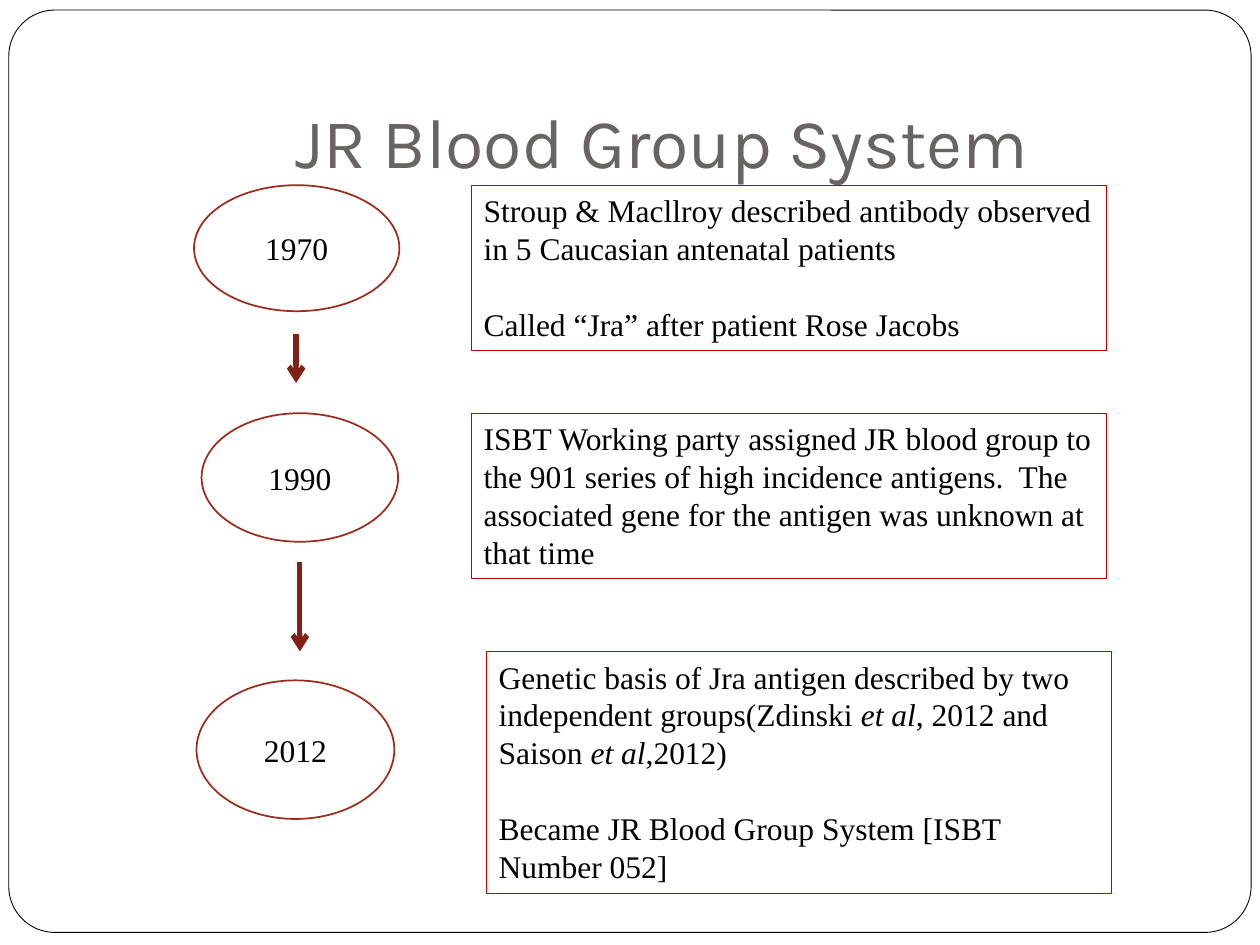
from pptx import Presentation
from pptx.dml.color import RGBColor
from pptx.enum.shapes import MSO_CONNECTOR, MSO_SHAPE
from pptx.enum.text import MSO_ANCHOR, PP_ALIGN
from pptx.oxml.ns import qn
from pptx.util import Pt
from lxml import etree

OVAL, RECTANGLE, ROUNDED = MSO_SHAPE.OVAL, MSO_SHAPE.RECTANGLE, MSO_SHAPE.ROUNDED_RECTANGLE
STRAIGHT = MSO_CONNECTOR.STRAIGHT
TOP, MIDDLE, BOTTOM = MSO_ANCHOR.TOP, MSO_ANCHOR.MIDDLE, MSO_ANCHOR.BOTTOM
LEFT, CENTER = PP_ALIGN.LEFT, PP_ALIGN.CENTER

TITLE = "JR Blood Group System"
EVENTS = [
    {
        "year": "1970",
        "oval": (154, 147, 163, 100),
        "box": (374, 147, 504, 131),
        "paragraphs": [
            ["Stroup & Macllroy described antibody observed in 5 Caucasian antenatal patients"],
            ["Called “Jra” after patient Rose Jacobs"],
        ],
    },
    {
        "year": "1990",
        "oval": (160, 328, 156, 102),
        "box": (374, 328, 504, 131),
        "paragraphs": [
            ["ISBT Working party assigned JR blood group to the 901 series of high incidence "
             "antigens.  The associated gene for the antigen was unknown at that time"],
        ],
    },
    {
        "year": "2012",
        "oval": (156, 540, 157, 110),
        "box": (386, 517, 496, 192),
        "paragraphs": [
            ["Genetic basis of Jra antigen described by two independent groups(Zdinski ",
             "et al", ", 2012 and Saison ", "et al", ",2012)"],
            ["Became JR Blood Group System [ISBT Number 052]"],
        ],
    },
]
ARROWS = [(235, 265, 304), (238, 446, 517)]
ITALIC_TEXT = "et al"

THEME = {
    "title_font": "Karla", "body_font": "Times New Roman",
    "title_size": 40, "body_size": 18, "paragraph_gap": 21.6,
    "title": "696464", "text": "000000", "paper": "FFFFFF", "frame": "000000",
    "oval": "9B2D1F", "box": "C00000", "arrow": "812014",
}
SCALE = 9144


def px(*lengths):
    return [length * SCALE for length in lengths]


def color(name):
    return RGBColor.from_string(THEME[name])


def style_run(run, kind, color_name):
    run.font.name = THEME[f"{kind}_font"]
    run.font.size = Pt(THEME[f"{kind}_size"])
    run.font.color.rgb = color(color_name)


def add_outline(slide, preset, place, line, width, filled=True):
    shape = slide.shapes.add_shape(preset, *px(*place))
    shape.shadow.inherit = False
    if filled:
        shape.fill.solid()
        shape.fill.fore_color.rgb = color("paper")
    else:
        shape.fill.background()
    shape.line.color.rgb = color(line)
    shape.line.width = Pt(width)
    return shape


def write(shape, paragraphs, anchor, alignment):
    frame = shape.text_frame
    frame.word_wrap = True
    frame.vertical_anchor = anchor
    for index, parts in enumerate(paragraphs):
        paragraph = frame.add_paragraph() if index else frame.paragraphs[0]
        paragraph.alignment = alignment
        if index:
            paragraph.space_before = Pt(THEME["paragraph_gap"])
        for part in parts:
            run = paragraph.add_run()
            run.text = part
            style_run(run, "body", "text")
            if part == ITALIC_TEXT:
                run.font.italic = True


def add_title(slide):
    title = slide.shapes.title
    title.left, title.top, title.width, title.height = px(100, 30, 850, 125)
    frame = title.text_frame
    frame.text = TITLE
    frame.word_wrap = True
    frame.vertical_anchor = BOTTOM
    frame.margin_bottom = px(10)[0]
    paragraph = frame.paragraphs[0]
    paragraph.alignment = CENTER
    style_run(paragraph.runs[0], "title", "title")
    return title


def add_arrow(slide, x, top, bottom):
    arrow = slide.shapes.add_connector(STRAIGHT, *px(x, top, x, bottom))
    arrow.line.color.rgb = color("arrow")
    arrow.line.width = Pt(3)
    etree.SubElement(arrow.line._get_or_add_ln(), qn("a:tailEnd"), type="arrow")
    etree.SubElement(arrow.element.spPr, qn("a:effectLst"))


def main():
    presentation = Presentation()
    presentation.slide_width, presentation.slide_height = px(1000, 750)
    slide = presentation.slides.add_slide(presentation.slide_layouts[5])

    border = add_outline(slide, ROUNDED, (7, 8, 986, 732), "frame", 0.5)
    border.adjustments[0] = 0.05
    border.element.addnext(add_title(slide).element)

    for event in EVENTS:
        oval = add_outline(slide, OVAL, event["oval"], "oval", 1)
        write(oval, [[event["year"]]], MIDDLE, CENTER)
        box = add_outline(slide, RECTANGLE, event["box"], "box", 0.75, filled=False)
        write(box, event["paragraphs"], TOP, LEFT)
    for arrow in ARROWS:
        add_arrow(slide, *arrow)

    presentation.save("out.pptx")


if __name__ == "__main__":
    main()
